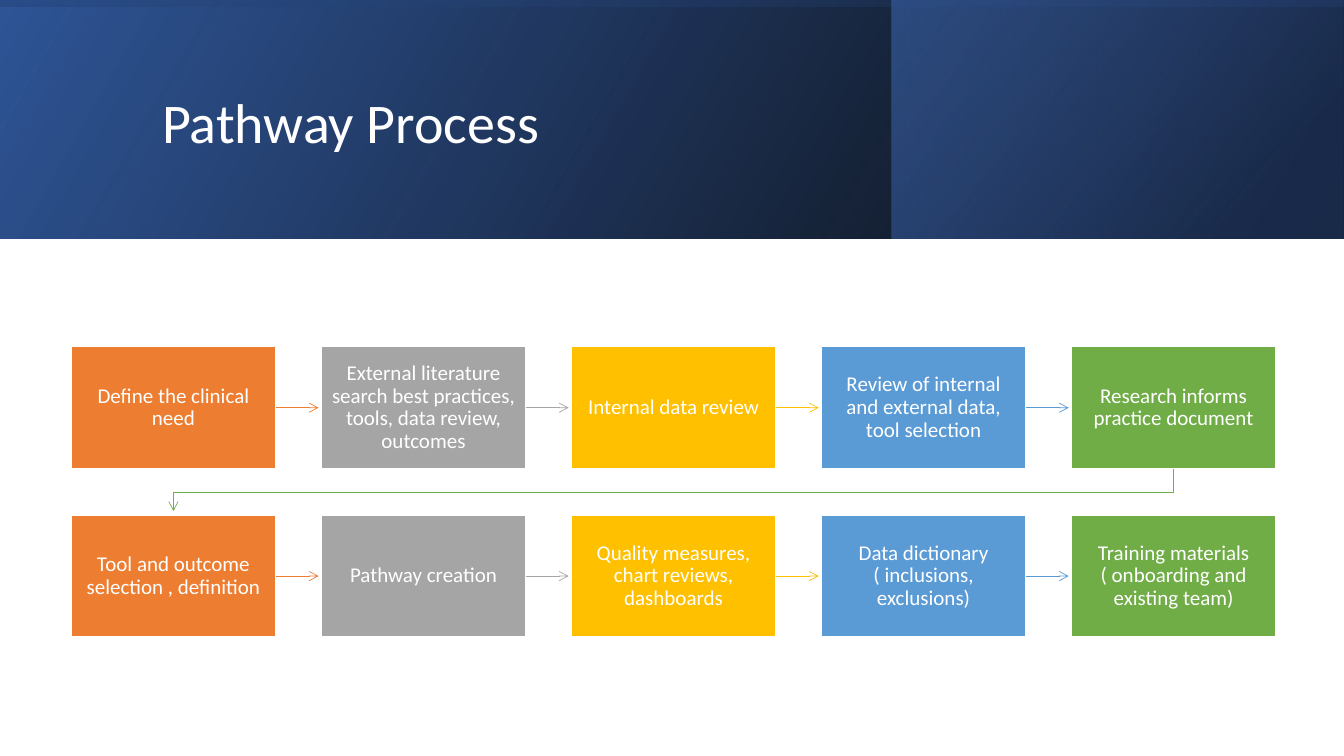
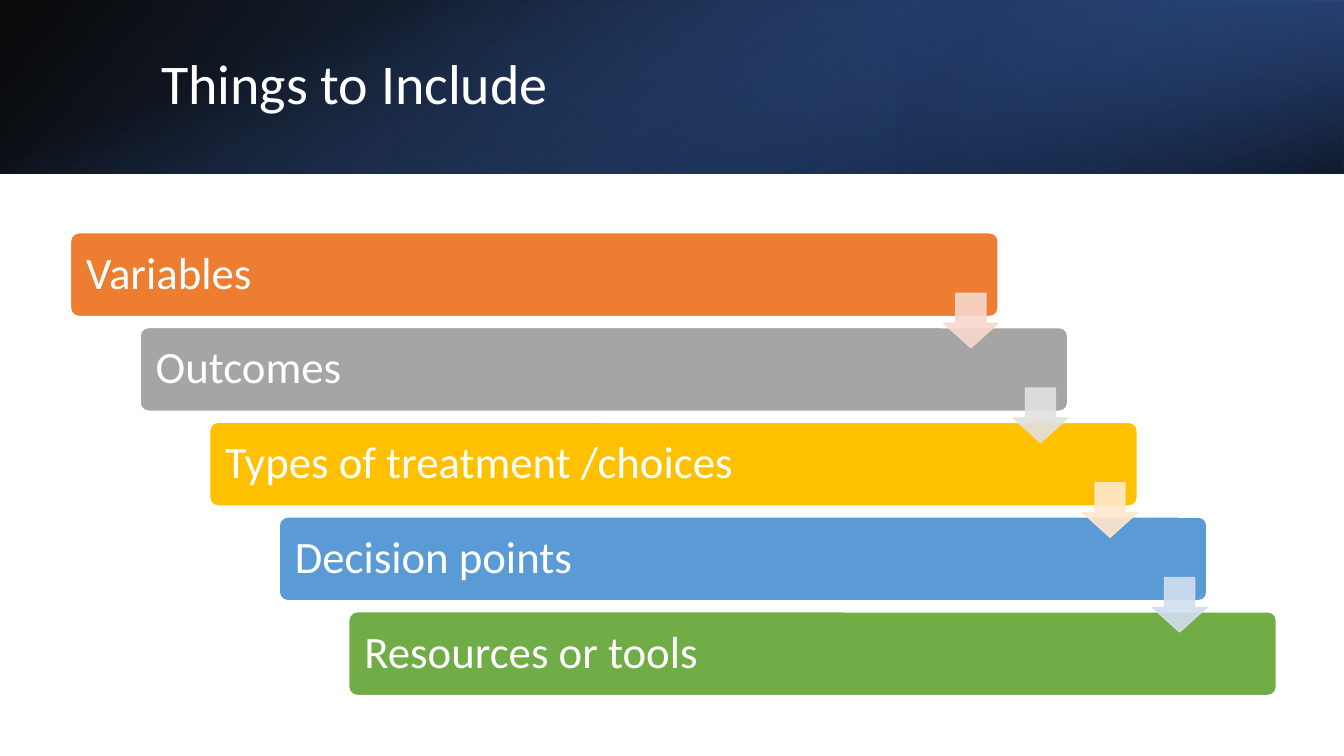
from lxml.etree import SubElement
from pptx import Presentation
from pptx.dml.color import RGBColor as RGB
from pptx.enum.shapes import MSO_CONNECTOR as CONN, MSO_SHAPE as SHAPE
from pptx.enum.text import MSO_ANCHOR as ANCHOR, PP_ALIGN as ALIGN
from pptx.oxml.ns import qn
from pptx.util import Inches, Pt

W, H = 13.33, 7.5
WHITE = RGB(0xFF, 0xFF, 0xFF)
BLACK = RGB(0x00, 0x00, 0x00)
NAVY = RGB(0x20, 0x38, 0x64)
BLUE = RGB(0x2F, 0x55, 0x97)
BRIGHT = RGB(0x44, 0x72, 0xC4)
ORANGE = RGB(0xED, 0x7D, 0x31)
GRAY = RGB(0xA5, 0xA5, 0xA5)
GOLD = RGB(0xFF, 0xC0, 0x00)
SKY = RGB(0x5B, 0x9B, 0xD5)
GREEN = RGB(0x70, 0xAD, 0x47)
ACCENTS = [ORANGE, GRAY, GOLD, SKY, GREEN]
TINTS = [RGB(0xF8, 0xD7, 0xCE), RGB(0xE1, 0xE1, 0xE1),
         RGB(0xFF, 0xE8, 0xCC), RGB(0xD2, 0xDE, 0xEF)]

TITLE = {"size": Pt(40), "name": "Calibri"}
STEP = {"size": Pt(15), "name": "Calibri"}
ITEM = {"size": Pt(32), "name": "Calibri"}

PROCESS = {
    "title": "Pathway Process",
    "title_box": (1.51, 0.38, 10.63, 1.72),
    "bands": [
        ((0, 0, W, 2.37), 0, True, 330, [(0, BLACK, 96), (100, BLUE, 100)]),
        ((8.84, 0, 4.48, 2.37), 0, True, 320, [(19, NAVY, 68), (100, BRIGHT, 48)]),
        ((5.48, -5.48, 2.37, W), 270, True, 350, [(23, BLUE, 16), (99, BLACK, 45)]),
    ],
    "rows": [
        ["Define the clinical need",
         "External literature search best practices, tools, data review, outcomes",
         "Internal data review",
         "Review of internal and external data, tool selection",
         "Research informs practice document"],
        ["Tool and outcome selection , definition",
         "Pathway creation",
         "Quality measures, chart reviews, dashboards",
         "Data dictionary ( inclusions, exclusions)",
         "Training materials ( onboarding and existing team)"],
    ],
}
INCLUDE = {
    "title": "Things to Include",
    "title_box": (1.5, 0.38, 10.98, 0.96),
    "bands": [
        ((0, 0, W, 1.72), 0, True, 140, [(0, BLACK, 96), (100, BLUE, 100)]),
        ((8.89, 0, 4.44, 1.72), 180, True, 320, [(19, NAVY, 68), (100, BRIGHT, 79)]),
        ((5.8, -5.8, 1.72, W), 90, False, 340, [(23, BRIGHT, 0), (99, BLACK, 74)]),
    ],
    "items": ["Variables", "Outcomes", "Types of treatment /choices",
              "Decision points", "Resources or tools"],
}


def inches(*values):
    return [Inches(v) for v in values]


def write(sp, text, style, margin=None, align=ALIGN.LEFT):
    tf = sp.text_frame
    tf.word_wrap = True
    tf.vertical_anchor = ANCHOR.MIDDLE
    if margin is not None:
        for side in ("left", "top", "right", "bottom"):
            setattr(tf, f"margin_{side}", Inches(margin))
    p = tf.paragraphs[0]
    p.alignment, p.line_spacing = align, 0.9
    r = p.add_run()
    r.text = text
    for key, value in style.items():
        setattr(r.font, key, value)
    r.font.color.rgb = WHITE


def add_block(s, kind, box, color, line=WHITE):
    sp = s.shapes.add_shape(kind, *inches(*box))
    sp.shadow.inherit = False
    sp.fill.solid()
    sp.fill.fore_color.rgb = color
    sp.line.color.rgb = line
    sp.line.width = Pt(1)
    return sp


def add_band(s, box, rotation, flip, angle, stops):
    sp = s.shapes.add_shape(SHAPE.RECTANGLE, *inches(*box))
    sp.shadow.inherit = False
    sp.line.fill.background()
    sp.rotation = rotation
    props = sp.element.spPr
    if flip:
        props.find(qn("a:xfrm")).set("flipH", "1")
    sp.fill.gradient()
    grad = props.find(qn("a:gradFill"))
    for child in list(grad):
        grad.remove(child)
    stop_list = SubElement(grad, qn("a:gsLst"))
    for pos, color, alpha in stops:
        gs = SubElement(stop_list, qn("a:gs"), pos=str(pos * 1000))
        clr = SubElement(gs, qn("a:srgbClr"), val=str(color))
        SubElement(clr, qn("a:alpha"), val=str(alpha * 1000))
    SubElement(grad, qn("a:lin"), ang=str(angle * 60000), scaled="0")


def style_arrow(line, color):
    line.color.rgb = color
    line.width = Pt(0.5)
    SubElement(line._get_or_add_ln(), qn("a:tailEnd"), type="arrow")


def add_arrow(s, x, y, length, color):
    cn = s.shapes.add_connector(CONN.STRAIGHT, *inches(x, y, x + length, y))
    style_arrow(cn.line, color)
    SubElement(cn.element.spPr, qn("a:effectLst"))


def add_return_arrow(s, points, color):
    start, *rest = [inches(*pt) for pt in points]
    fb = s.shapes.build_freeform(*start)
    fb.add_line_segments(rest, close=False)
    sp = fb.convert_to_shape()
    sp.shadow.inherit = False
    sp.fill.background()
    style_arrow(sp.line, color)


def add_slide(prs, content):
    s = prs.slides.add_slide(prs.slide_layouts[6])
    for band in content["bands"]:
        add_band(s, *band)
    write(s.shapes.add_textbox(*inches(*content["title_box"])), content["title"], TITLE)
    return s


def build_process(prs):
    s = add_slide(prs, PROCESS)
    left, top, w, h, dx, dy = 0.71, 3.44, 2.02, 1.21, 2.48, 1.67
    for row, steps in enumerate(PROCESS["rows"]):
        y = top + row * dy
        for col, (text, color) in enumerate(zip(steps, ACCENTS)):
            x = left + col * dx
            if col < len(steps) - 1:
                add_arrow(s, x + w, y + h / 2, 0.43, color)
            sp = add_block(s, SHAPE.RECTANGLE, (x, y, w, h), color)
            write(sp, text, STEP, 0.1, ALIGN.CENTER)
    first, last = left + w / 2, left + 4 * dx + w / 2
    bottom, turn = top + h, top + (h + dy) / 2
    add_return_arrow(s, [(last, bottom), (last, turn), (first, turn),
                         (first, top + dy - 0.04)], GREEN)


def build_include(prs):
    s = add_slide(prs, INCLUDE)
    left, top, w, h, dx, dy, side = 0.7, 2.31, 9.2, 0.83, 0.69, 0.94, 0.54
    for i, (text, color) in enumerate(zip(INCLUDE["items"], ACCENTS)):
        sp = add_block(s, SHAPE.ROUNDED_RECTANGLE,
                       (left + i * dx, top + i * dy, w, h), color)
        sp.adjustments[0] = 0.1
        write(sp, text, ITEM, 0.13)
    for i, tint in enumerate(TINTS):
        x, y = left + w - side + i * dx, top + 0.6 + i * dy
        sp = add_block(s, SHAPE.DOWN_ARROW, (x, y, side, side), tint, tint)
        sp.adjustments[0], sp.adjustments[1] = 0.45, 0.55
        sp.adjustments[0], sp.adjustments[1] = 0.55, 0.45
        for clr in sp.element.spPr.iter(qn("a:srgbClr")):
            SubElement(clr, qn("a:alpha"), val="90000")


def main():
    prs = Presentation()
    prs.slide_width, prs.slide_height = inches(W, H)
    build_process(prs)
    build_include(prs)
    prs.save("out.pptx")


if __name__ == "__main__":
    main()
